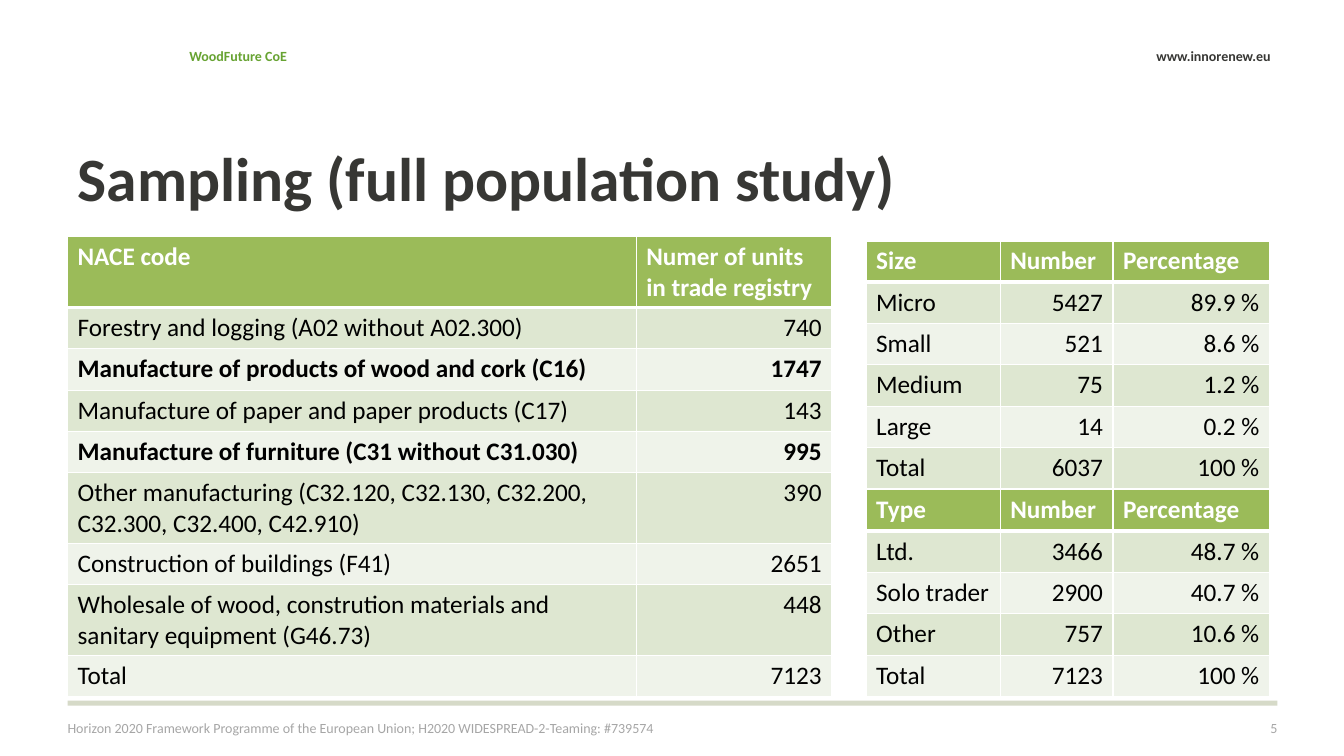
from pptx import Presentation, util as u
from pptx.dml.color import RGBColor
from pptx.enum import shapes, text
from pptx.oxml import parse_xml
from pptx.oxml.ns import nsdecls

PX = 9144  # 100 px to the inch
FONT = "Calibri"
WHITE = RGBColor(0xFF, 0xFF, 0xFF)
BLACK = RGBColor(0x00, 0x00, 0x00)
CHARCOAL = RGBColor(0x37, 0x37, 0x34)
LEAF = RGBColor(0x67, 0xA3, 0x32)
GRAY = RGBColor(0xA6, 0xA6, 0xA6)
RULE = RGBColor(0xD6, 0xDA, 0xC8)
HEADER = RGBColor(0x9B, 0xBB, 0x59)
BANDS = (RGBColor(0xDE, 0xE7, 0xD1), RGBColor(0xEF, 0xF3, 0xEA))
LEFT, RIGHT = text.PP_ALIGN.LEFT, text.PP_ALIGN.RIGHT
MIDDLE, BOTTOM = text.MSO_ANCHOR.MIDDLE, text.MSO_ANCHOR.BOTTOM

TITLE = "Sampling (full population study)"
TITLE_AREA = (67, 113, 1200, 125)
RULE_AREA = (67, 695, 1200, 5)
ROW_HEIGHT = 41

# wording, area, alignment, anchor, side inset, colour, bold
LABELS = [
    ("www.innorenew.eu", (956, 20, 314, 71), RIGHT, MIDDLE, 10, CHARCOAL, True),
    ("WoodFuture CoE", (178, 20, 314, 71), LEFT, MIDDLE, 10, LEAF, True),
    ("Horizon 2020 Framework Programme of the European Union; "
     "H2020 WIDESPREAD-2-Teaming: #739574",
     (67, 695, 826, 40), LEFT, BOTTOM, 0, GRAY, False),
    ("5", (956, 695, 311, 40), RIGHT, BOTTOM, 0, GRAY, False),
]

NACE = [
    ("NACE code", "Numer of units in trade registry"),
    ("Forestry and logging (A02 without A02.300)", "740"),
    ("Manufacture of products of wood and cork (C16)", "1747"),
    ("Manufacture of paper and paper products (C17)", "143"),
    ("Manufacture of furniture (C31 without C31.030)", "995"),
    ("Other manufacturing (C32.120, C32.130, C32.200, C32.300, C32.400, C42.910)", "390"),
    ("Construction of buildings (F41)", "2651"),
    ("Wholesale of wood, constrution materials and sanitary equipment (G46.73)", "448"),
    ("Total", "7123"),
]
SIZES = [
    ("Size", "Number", "Percentage"),
    ("Micro", "5427", "89.9 %"),
    ("Small", "521", "8.6 %"),
    ("Medium", "75", "1.2 %"),
    ("Large", "14", "0.2 %"),
    ("Total", "6037", "100 %"),
]
TYPES = [
    ("Type", "Number", "Percentage"),
    ("Ltd.", "3466", "48.7 %"),
    ("Solo trader", "2900", "40.7 %"),
    ("Other", "757", "10.6 %"),
    ("Total", "7123", "100 %"),
]
# rows, left, top, column widths, numbers of the bold rows
TABLES = [
    (NACE, 67, 235, (564, 194), (0, 2, 4)),
    (SIZES, 859, 239, (133, 112, 155), (0,)),
    (TYPES, 859, 486, (133, 112, 155), (0,)),
]


def emu(area):
    return [length * PX for length in area]


def write(frame, wording, size, color, bold, align):
    para = frame.paragraphs[0]
    para.alignment = align
    span = para.add_run()
    span.text = wording
    font = span.font
    font.name, font.size, font.bold = FONT, u.Pt(size), bold
    font.color.rgb = color


def add_label(page, wording, area, align, anchor, inset, color, bold):
    frame = page.shapes.add_textbox(*emu(area)).text_frame
    frame.word_wrap = True
    frame.vertical_anchor = anchor
    frame.margin_left = frame.margin_right = inset * PX
    write(frame, wording, 10, color, bold, align)


def add_borders(cell, row):
    """White cell edges, heavier between the header and the first data row."""
    points = {"L": 1, "R": 1, "T": 3 if row == 1 else 1, "B": 3 if row == 0 else 1}
    props = cell._tc.get_or_add_tcPr()
    for side, width in points.items():
        props.append(parse_xml(
            f'<a:ln{side} {nsdecls("a")} w="{u.Pt(width)}"><a:solidFill>'
            f'<a:srgbClr val="{WHITE}"/></a:solidFill></a:ln{side}>'))


def add_grid(page, rows, left, top, widths, bold_rows):
    area = emu((left, top, sum(widths), ROW_HEIGHT * len(rows)))
    table = page.shapes.add_table(len(rows), len(widths), *area).table
    for column, width in zip(table.columns, widths):
        column.width = width * PX
    for r, row in enumerate(rows):
        for c, wording in enumerate(row):
            cell = table.cell(r, c)
            add_borders(cell, r)
            cell.fill.solid()
            cell.fill.fore_color.rgb = BANDS[(r - 1) % 2] if r else HEADER
            write(cell.text_frame, wording, 18, BLACK if r else WHITE,
                  r in bold_rows, RIGHT if r and c else LEFT)


def main():
    deck = Presentation()
    deck.slide_width, deck.slide_height = emu((1333, 750))
    page = deck.slides.add_slide(deck.slide_layouts[5])

    rule = page.shapes.add_shape(shapes.MSO_SHAPE.RECTANGLE, *emu(RULE_AREA))
    rule.shadow.inherit = False
    rule.fill.solid()
    rule.fill.fore_color.rgb = RULE
    rule.line.fill.background()

    title = page.shapes.title
    title.left, title.top, title.width, title.height = emu(TITLE_AREA)
    title.text_frame.auto_size = text.MSO_AUTO_SIZE.NONE
    title.text_frame.vertical_anchor = MIDDLE
    write(title.text_frame, TITLE, 44, CHARCOAL, True, LEFT)

    for label in LABELS:
        add_label(page, *label)
    for grid in TABLES:
        add_grid(page, *grid)
    deck.save("out.pptx")


if __name__ == "__main__":
    main()
